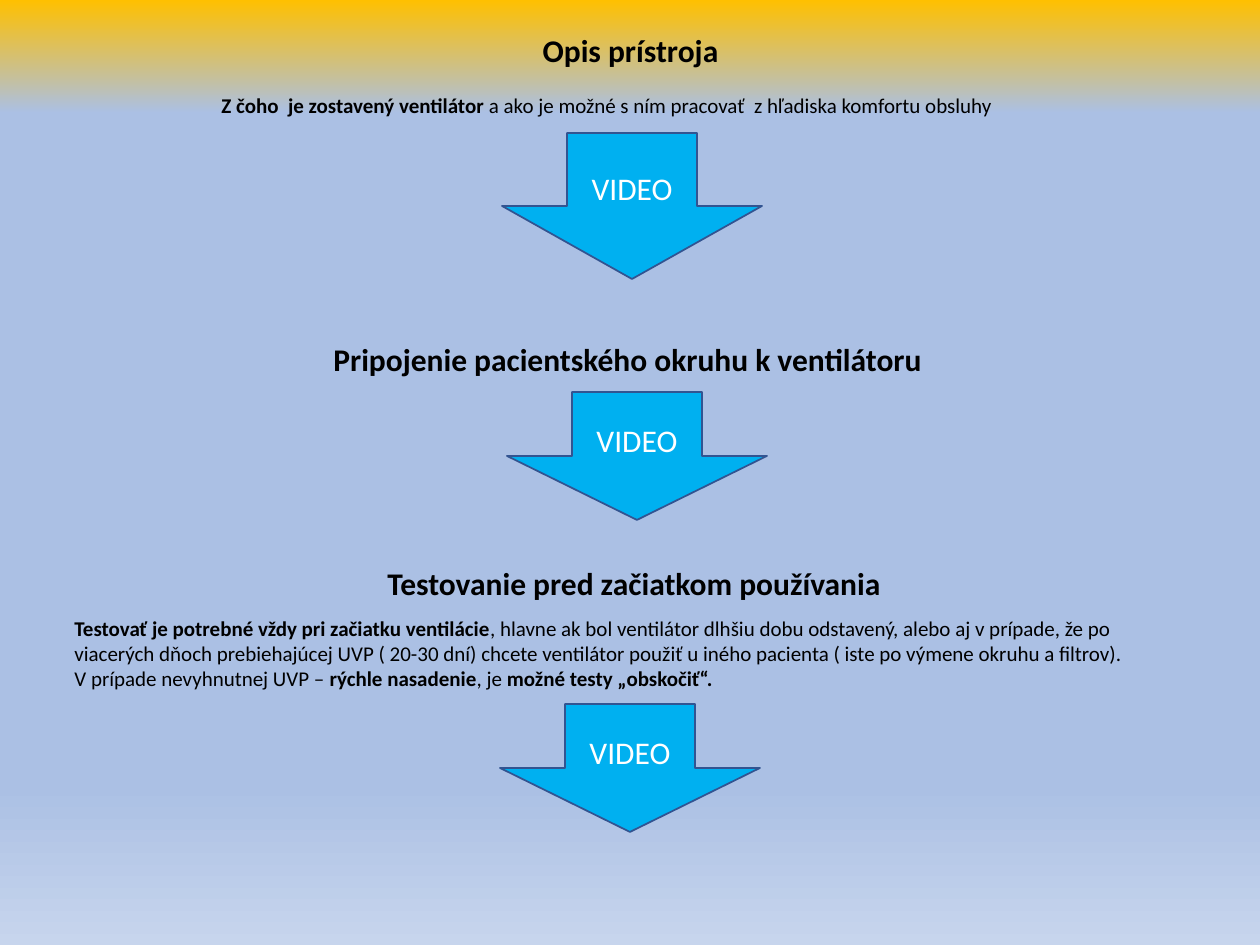
"""Builds the ventilator training slide with three video steps."""
from dataclasses import dataclass

from lxml import etree
from pptx import Presentation
from pptx.dml.color import RGBColor
from pptx.enum.shapes import MSO_SHAPE
from pptx.enum.text import MSO_ANCHOR, MSO_AUTO_SIZE, PP_ALIGN
from pptx.oxml.ns import qn
from pptx.util import Pt

DOWN_ARROW = MSO_SHAPE.DOWN_ARROW
TOP, MIDDLE = MSO_ANCHOR.TOP, MSO_ANCHOR.MIDDLE
LEFT, CENTER = PP_ALIGN.LEFT, PP_ALIGN.CENTER
FIT_SHAPE = MSO_AUTO_SIZE.SHAPE_TO_FIT_TEXT
EMU_PER_PX = 914400 / 126
TITLE_ONLY = 5


@dataclass(frozen=True)
class Theme:
    font: str = "Calibri"
    heading: int = 18
    body: int = 12
    ink: str = "000000"
    light: str = "FFFFFF"
    arrow: str = "00B0F0"
    outline: str = "325491"
    backdrop: tuple = ((0, "FFC000"), (12, "ABC0E4"), (83, "ABC0E4"), (100, "C7D5ED"))


def px(*lengths):
    return [round(length * EMU_PER_PX) for length in lengths]


class SlideBuilder:
    def __init__(self, page, theme):
        self.page = page
        self.theme = theme

    def background(self):
        fill = self.page.background.fill
        fill.gradient()
        fill.gradient_angle = 270
        stops = self.page.element.find(".//" + qn("a:gsLst"))
        for stop in list(stops):
            stops.remove(stop)
        for percent, color in self.theme.backdrop:
            stop = etree.SubElement(stops, qn("a:gs"), pos=str(percent * 1000))
            etree.SubElement(stop, qn("a:srgbClr"), val=color)

    def style(self, paragraph, size, color, align=LEFT):
        paragraph.alignment = align
        paragraph.font.name = self.theme.font
        paragraph.font.size = Pt(size)
        paragraph.font.color.rgb = RGBColor.from_string(color)

    def fill_text(self, box, paragraphs, size, wrap):
        frame = box.text_frame
        frame.word_wrap = wrap
        frame.auto_size = FIT_SHAPE
        frame.vertical_anchor = TOP
        for index, spans in enumerate(paragraphs):
            paragraph = frame.add_paragraph() if index else frame.paragraphs[0]
            self.style(paragraph, size, self.theme.ink)
            for text, bold in spans:
                span = paragraph.add_run()
                span.text = text
                span.font.bold = bold

    def title(self, text, left, top, width, height):
        box = self.page.shapes.title
        box.left, box.top, box.width, box.height = px(left, top, width, height)
        self.fill_text(box, [[(text, True)]], self.theme.heading, False)

    def heading(self, text, left, top, width, height):
        box = self.page.shapes.add_textbox(*px(left, top, width, height))
        self.fill_text(box, [[(text, True)]], self.theme.heading, False)

    def body(self, paragraphs, left, top, width, height, wrap=True):
        box = self.page.shapes.add_textbox(*px(left, top, width, height))
        self.fill_text(box, paragraphs, self.theme.body, wrap)

    def video_arrow(self, left, top, height, width=260):
        arrow = self.page.shapes.add_shape(DOWN_ARROW, *px(left, top, width, height))
        arrow.shadow.inherit = False
        arrow.fill.solid()
        arrow.fill.fore_color.rgb = RGBColor.from_string(self.theme.arrow)
        arrow.line.color.rgb = RGBColor.from_string(self.theme.outline)
        arrow.line.width = Pt(1)
        frame = arrow.text_frame
        frame.vertical_anchor = MIDDLE
        frame.text = "VIDEO"
        self.style(frame.paragraphs[0], self.theme.heading, self.theme.light, CENTER)


def main():
    deck = Presentation()
    deck.slide_width, deck.slide_height = px(1260, 945)
    page = deck.slides.add_slide(deck.slide_layouts[TITLE_ONLY])
    slide = SlideBuilder(page, Theme())
    slide.background()

    slide.title("Opis prístroja", 530, 25, 203, 50)
    slide.body([[
        ("Z čoho  je zostavený ventilátor ", True),
        ("a ako je možné s ním pracovať  z hľadiska komfortu obsluhy", False),
    ]], 209, 86, 811, 38, wrap=False)
    slide.video_arrow(502, 133, 146)

    slide.heading("Pripojenie pacientského okruhu k ventilátoru", 321, 334, 619, 50)
    slide.video_arrow(507, 392, 128)

    slide.heading("Testovanie pred začiatkom používania", 375, 558, 522, 50)
    slide.body([
        [
            ("Testovať je potrebné vždy pri začiatku ventilácie", True),
            (", hlavne ak bol ventilátor dlhšiu dobu odstavený, alebo aj v prípade, "
             "že po viacerých dňoch prebiehajúcej UVP ( 20-30 dní) chcete ventilátor "
             "použiť u iného pacienta ( iste po výmene okruhu a filtrov).", False),
        ],
        [
            ("V prípade nevyhnutnej UVP – ", False),
            ("rýchle nasadenie", True),
            (", je ", False),
            ("možné testy „obskočiť“.", True),
        ],
    ], 62, 609, 1142, 89)
    slide.video_arrow(500, 704, 128)

    deck.save("out.pptx")


if __name__ == "__main__":
    main()
